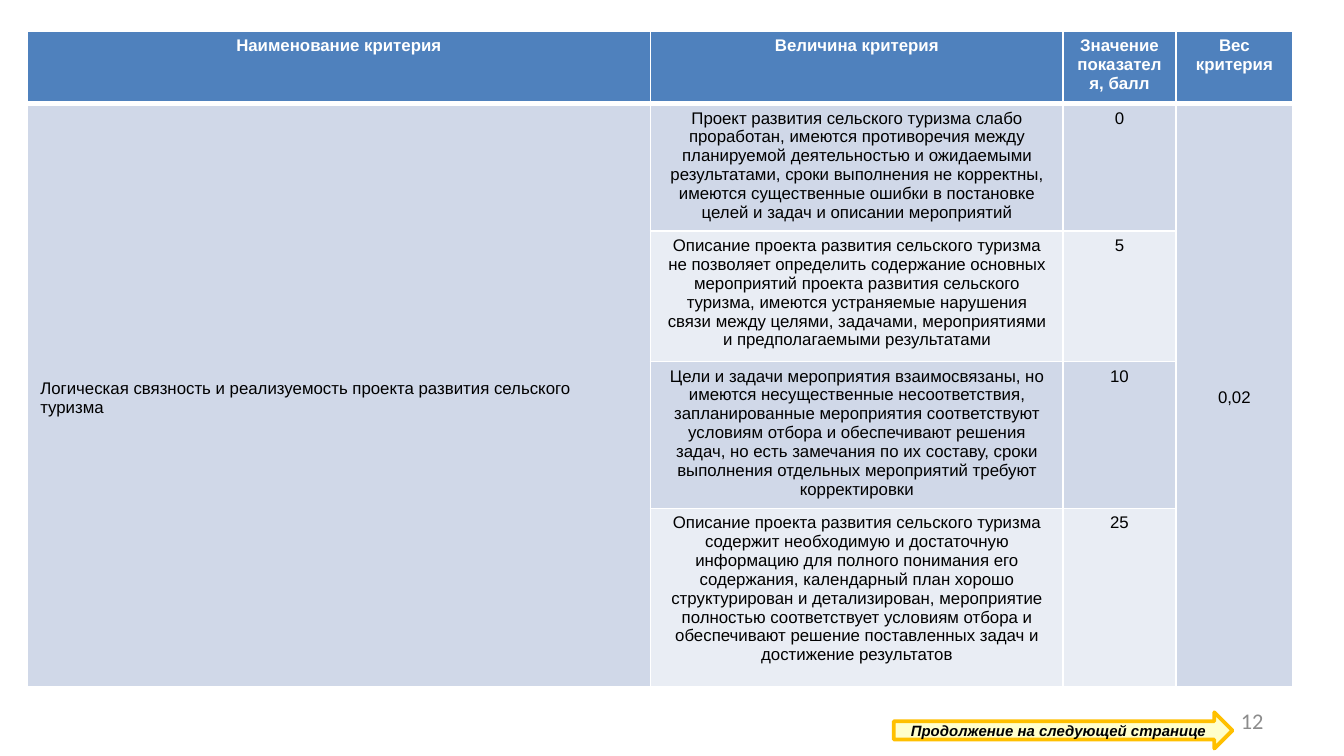
from dataclasses import dataclass

from lxml import etree
from pptx import Presentation
from pptx.dml.color import RGBColor
from pptx.enum import shapes, text
from pptx.oxml import ns
from pptx.util import Inches, Pt


@dataclass
class Theme:
    head: str = "4F81BD"
    dark: str = "D0D8E8"
    light: str = "E9EDF4"
    white: str = "FFFFFF"
    black: str = "000000"
    gray: str = "8C8C8C"
    cream: str = "FFFFCC"
    gold: str = "FFC000"
    font: str = "Arial"
    body: float = 9
    note: float = 8
    page: float = 12


theme = Theme()
mid = text.MSO_ANCHOR.MIDDLE
left, center, right = text.PP_ALIGN.LEFT, text.PP_ALIGN.CENTER, text.PP_ALIGN.RIGHT


def write(frame, words, size, color, align=center, bold=False, italic=False, font=theme.font):
    para = frame.paragraphs[0]
    para.alignment = align
    run = para.add_run()
    run.text = words
    run.font.name, run.font.size = font, Pt(size)
    run.font.bold, run.font.italic = bold, italic
    run.font.color.rgb = RGBColor.from_string(color)


def paint(cell, color, base):
    # Borders come before the fill in the cell properties
    props = cell._tc.get_or_add_tcPr()
    for side, width in (("lnL", 1), ("lnR", 1), ("lnT", 1), ("lnB", base)):
        line = etree.SubElement(props, ns.qn("a:" + side), w=str(Pt(width)))
        fill = etree.SubElement(line, ns.qn("a:solidFill"))
        etree.SubElement(fill, ns.qn("a:srgbClr"), val=theme.white)
    cell.fill.solid()
    cell.fill.fore_color.rgb = RGBColor.from_string(color)
    cell.margin_top, cell.margin_bottom = Inches(0.04), 0


# Widescreen slide, 16:9
deck = Presentation()
deck.slide_width = Inches(10)
deck.slide_height = deck.slide_width * 9 // 16
slide = deck.slides.add_slide(deck.slide_layouts[6])

# Page number
box = slide.shapes.add_textbox(Inches(7.17), Inches(5.21), Inches(2.33), Inches(0.3))
box.text_frame.word_wrap = True
box.text_frame.vertical_anchor = mid
write(box.text_frame, "12", theme.page, theme.gray, right, font="Calibri")

# Criteria table
heads = ["Наименование критерия", "Величина критерия", "Значение показателя, балл", "Вес критерия"]
name = "Логическая связность и реализуемость проекта развития сельского туризма"
weight = "0,02"
levels = [
    ("Проект развития сельского туризма слабо проработан, имеются противоречия между "
     "планируемой деятельностью и ожидаемыми результатами, сроки выполнения не корректны, "
     "имеются существенные ошибки в постановке целей и задач и описании мероприятий", "0"),
    ("Описание проекта развития сельского туризма не позволяет определить содержание основных "
     "мероприятий проекта развития сельского туризма, имеются устраняемые нарушения "
     "связи между целями, задачами, мероприятиями и предполагаемыми результатами", "5"),
    ("Цели и задачи мероприятия взаимосвязаны, но имеются несущественные несоответствия, "
     "запланированные мероприятия соответствуют условиям отбора и обеспечивают решения "
     "задач, но есть замечания по их составу, сроки выполнения отдельных мероприятий "
     "требуют корректировки", "10"),
    ("Описание проекта развития сельского туризма содержит необходимую и достаточную "
     "информацию для полного понимания его содержания, календарный план хорошо "
     "структурирован и детализирован, мероприятие полностью соответствует условиям отбора и "
     "обеспечивают решение поставленных задач и достижение результатов", "25"),
]
widths = [4.64, 3.07, 0.84, 0.87]
heights = [0.54, 0.95, 0.97, 0.99, 1.33]
grid = slide.shapes.add_table(len(heights), len(widths), Inches(0.2), Inches(0.23),
                              Inches(sum(widths)), Inches(5.03)).table
for col, width in zip(grid.columns, widths):
    col.width = Inches(width)
for row, height in zip(grid.rows, heights):
    row.height = Inches(height)

# Header row
for col, words in enumerate(heads):
    cell = grid.cell(0, col)
    paint(cell, theme.head, 3)
    write(cell.text_frame, words, theme.body, theme.white, bold=True)

# Score rows, banded in the two middle columns
for row, level in enumerate(levels, 1):
    band = theme.dark if row % 2 else theme.light
    for col, color in enumerate([theme.dark, band, band, theme.dark]):
        paint(grid.cell(row, col), color, 1)
    for col, words in enumerate(level, 1):
        write(grid.cell(row, col).text_frame, words, theme.body, theme.black)

# Cells that span all scores
for col, words, align in ((0, name, left), (3, weight, center)):
    cell = grid.cell(1, col)
    cell.merge(grid.cell(len(levels), col))
    cell.vertical_anchor = mid
    write(cell.text_frame, words, theme.body, theme.black, align)

# Arrow to the next page
arrow = slide.shapes.add_shape(shapes.MSO_SHAPE.RIGHT_ARROW, Inches(6.65), Inches(5.3),
                               Inches(2.52), Inches(0.27))
arrow.shadow.inherit = False
arrow.fill.solid()
arrow.fill.fore_color.rgb = RGBColor.from_string(theme.cream)
arrow.line.color.rgb = RGBColor.from_string(theme.gold)
arrow.line.width = Pt(2)
frame = arrow.text_frame
frame.word_wrap = False
frame.vertical_anchor = mid
frame.margin_left = frame.margin_right = frame.margin_top = frame.margin_bottom = 0
write(frame, "Продолжение на следующей странице", theme.note, theme.black, bold=True, italic=True)

deck.save("out.pptx")
